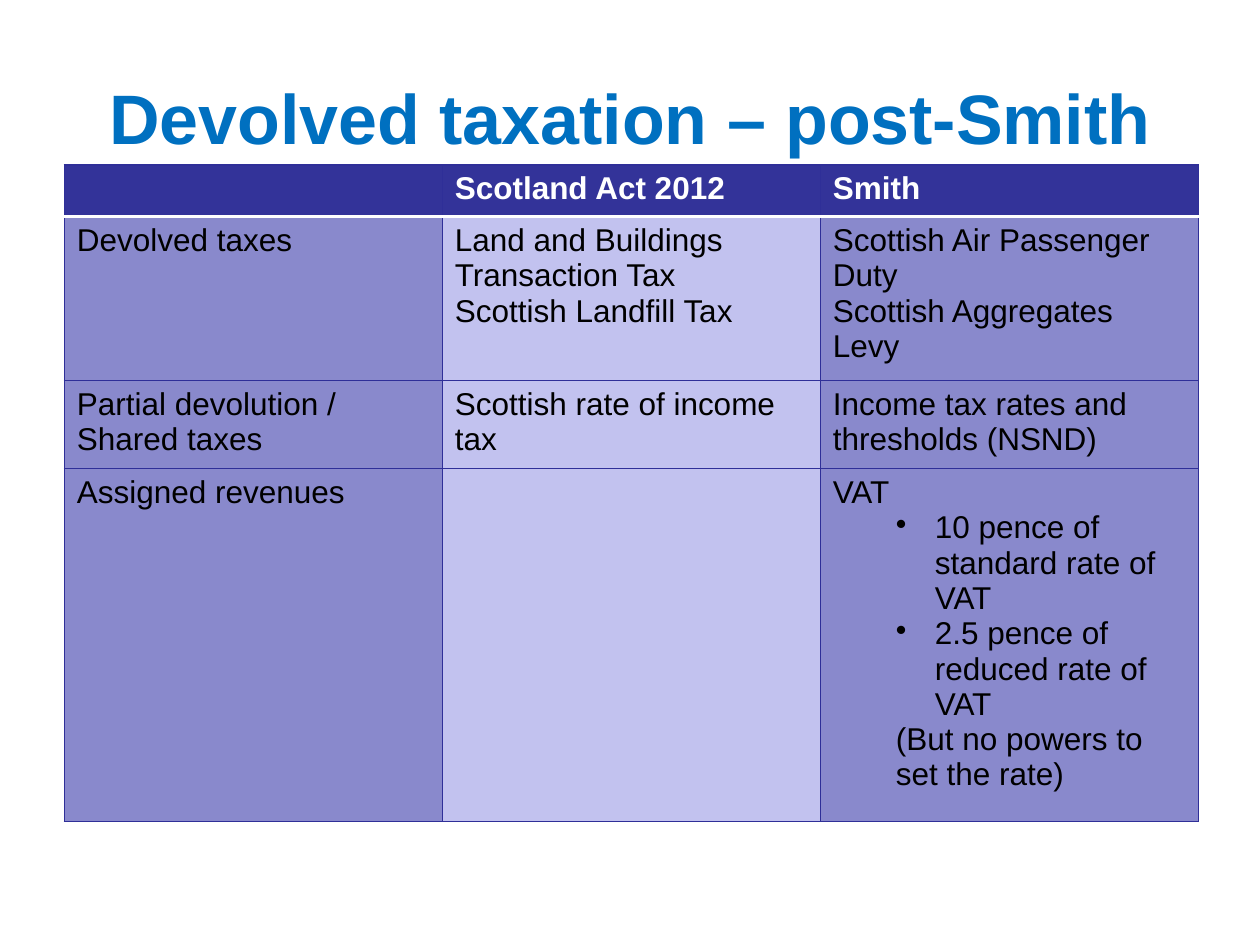
from dataclasses import dataclass

from lxml import etree
from pptx import Presentation
from pptx.dml.color import RGBColor
from pptx.enum.text import MSO_ANCHOR, PP_ALIGN
from pptx.oxml.ns import qn
from pptx.util import Inches, Pt

CENTER = PP_ALIGN.CENTER
MIDDLE = MSO_ANCHOR.MIDDLE


@dataclass(frozen=True)
class Theme:
    font: str = "Arial"
    title: str = "0070C0"
    head: str = "333399"
    dark: str = "8989CC"
    light: str = "C2C2EF"
    line: str = "2F2F98"
    white: str = "FFFFFF"
    black: str = "000000"
    title_size: int = 40
    body_size: int = 18
    thin: float = 0.75
    thick: float = 2


@dataclass
class Item:
    text: str
    left: float
    hang: float = 0


WIDTHS = [3, 3, 3]
HEIGHTS = [0.41, 1.22, 0.66, 2.62]
ROWS = [
    [[], ["Scotland Act 2012"], ["Smith"]],
    [["Devolved taxes"],
     ["Land and Buildings Transaction Tax", "Scottish Landfill Tax"],
     ["Scottish Air Passenger Duty", "Scottish Aggregates Levy"]],
    [["Partial devolution /", "Shared taxes"],
     ["Scottish rate of income tax"],
     ["Income tax rates and thresholds (NSND)"]],
    [["Assigned revenues"],
     [],
     ["VAT",
      Item("10 pence of standard rate of VAT", 0.81, 0.31),
      Item("2.5 pence of reduced rate of VAT", 0.81, 0.31),
      Item("(But no powers to set the rate)", 0.5)]],
]


class Deck:
    def __init__(self, theme):
        self.theme = theme
        self.file = Presentation()
        self.file.slide_width = Inches(10)
        self.file.slide_height = Inches(7.5)
        self.slide = self.file.slides.add_slide(self.file.slide_layouts[6])

    def style(self, para, size, color, bold):
        for font in [para.font] + [run.font for run in para.runs]:
            font.name = self.theme.font
            font.size = Pt(size)
            font.bold = bold
            font.color.rgb = RGBColor.from_string(color)

    def title(self, text, left, top, width, height):
        box = self.slide.shapes.add_textbox(
            Inches(left), Inches(top), Inches(width), Inches(height))
        frame = box.text_frame
        frame.word_wrap = True
        frame.vertical_anchor = MIDDLE
        frame.text = text
        para = frame.paragraphs[0]
        para.alignment = CENTER
        self.style(para, self.theme.title_size, self.theme.title, True)

    def indent(self, para, item):
        """Indent a second-level paragraph, with a bullet if it hangs."""
        para.level = 1
        props = para._p.get_or_add_pPr()
        props.set("marL", str(Inches(item.left)))
        props.set("indent", str(-Inches(item.hang)))
        if item.hang:
            etree.SubElement(props, qn("a:buChar"), char="•")
        else:
            etree.SubElement(props, qn("a:buNone"))

    def border(self, cell, side, color, width):
        line = etree.SubElement(cell._tc.get_or_add_tcPr(), qn(f"a:ln{side}"),
                                w=str(Pt(width)))
        fill = etree.SubElement(line, qn("a:solidFill"))
        etree.SubElement(fill, qn("a:srgbClr"), val=color)

    def cell(self, cell, items, row, col):
        theme = self.theme
        head = row == 0
        for side in "LRTB":
            if (row, side) in ((0, "B"), (1, "T")):
                self.border(cell, side, theme.white, theme.thick)
            else:
                self.border(cell, side, theme.line, theme.thin)
        shade = theme.light if col == 1 else theme.dark
        cell.fill.solid()
        cell.fill.fore_color.rgb = RGBColor.from_string(
            theme.head if head else shade)

        frame = cell.text_frame
        texts = [i.text if isinstance(i, Item) else i for i in items]
        frame.text = "\n".join(texts)
        for para, item in zip(frame.paragraphs, items):
            if isinstance(item, Item):
                self.indent(para, item)
        for para in frame.paragraphs:
            self.style(para, theme.body_size,
                       theme.white if head else theme.black, head)

    def table(self, rows, left, top, widths, heights):
        grid = self.slide.shapes.add_table(
            len(rows), len(widths), Inches(left), Inches(top),
            Inches(sum(widths)), Inches(sum(heights))).table
        for column, width in zip(grid.columns, widths):
            column.width = Inches(width)
        for line, height in zip(grid.rows, heights):
            line.height = Inches(height)
        for row, cells in enumerate(rows):
            for col, items in enumerate(cells):
                self.cell(grid.cell(row, col), items, row, col)


def main():
    deck = Deck(Theme())
    deck.title("Devolved taxation – post-Smith", 0.5, 0.3, 9, 1.25)
    deck.table(ROWS, 0.51, 1.31, WIDTHS, HEIGHTS)
    deck.file.save("out.pptx")


if __name__ == "__main__":
    main()
